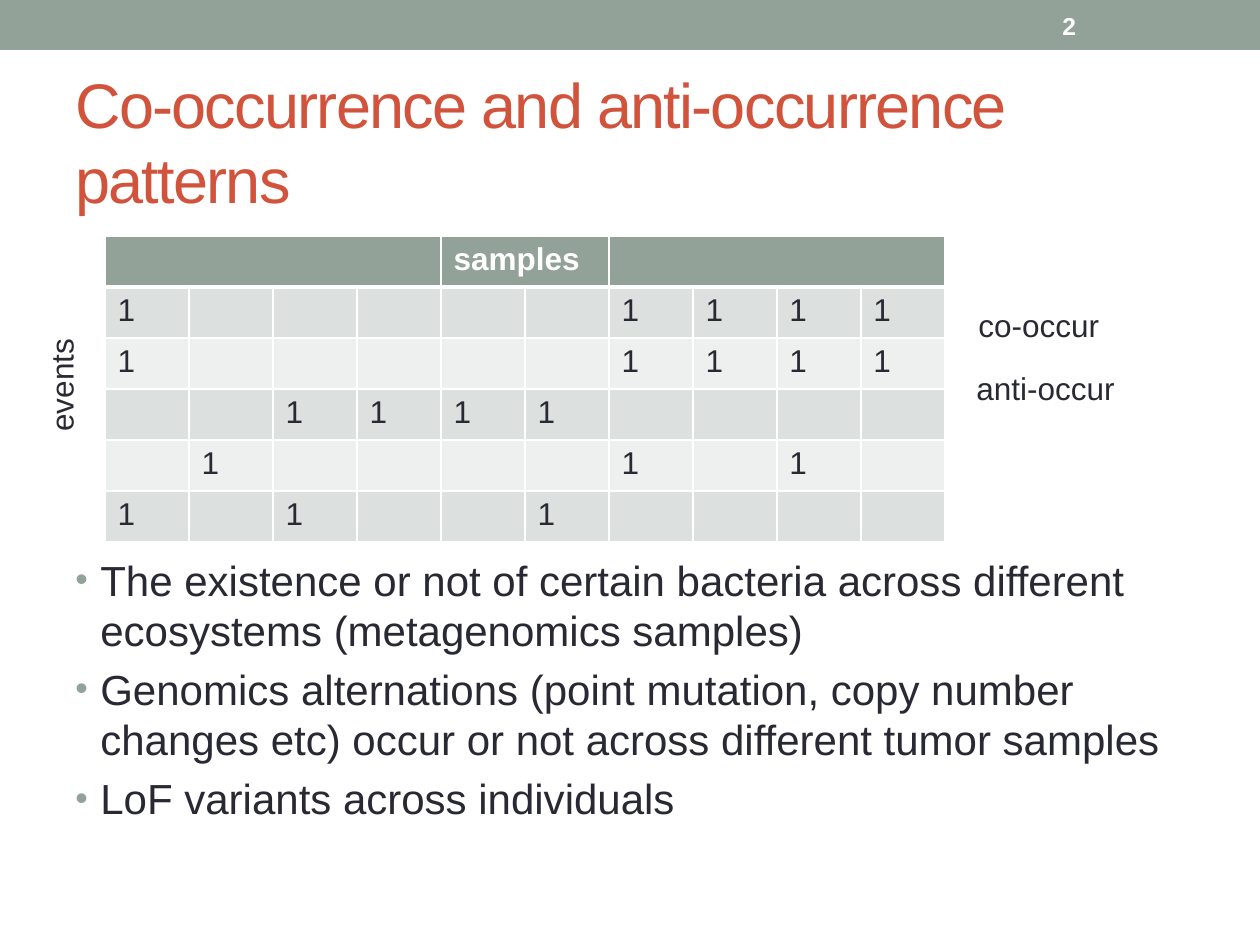
from dataclasses import dataclass, field

import pptx
import pptx.dml.color
import pptx.enum.shapes
import pptx.enum.text
import pptx.oxml
import pptx.oxml.ns
import pptx.util
from lxml import etree

PX = 914400 / 126
COLORS = {"sage": "93A299", "title": "D2533C", "text": "292934",
          "white": "FFFFFF", "odd": "DCE0DE", "even": "EEF0EF"}
MIDDLE = pptx.enum.text.MSO_ANCHOR.MIDDLE


@dataclass
class Label:
    text: str
    box: tuple[int, int, int, int]
    size: int = 18
    color: str = "text"
    bold: bool = False
    rotation: int = 0
    frame: dict = field(default_factory=lambda: {"word_wrap": False})


LABELS = [
    Label("Co-occurrence and anti-occurrence patterns", (63, 73, 1134, 136),
          36, "title", frame={"word_wrap": True, "vertical_anchor": MIDDLE}),
    Label("2", (1050, 3, 147, 45), 14, "white", True,
          frame={"word_wrap": True, "vertical_anchor": MIDDLE}),
    Label("events", (1, 359, 120, 50), rotation=270),
    Label("co-occur", (966, 300, 147, 50)),
    Label("anti-occur", (964, 363, 165, 50)),
]
BULLETS = [
    "The existence or not of certain bacteria across different ecosystems "
    "(metagenomics samples)",
    "Genomics alternations (point mutation, copy number changes etc) occur "
    "or not across different tumor samples",
    "LoF variants across individuals",
]
HEADERS = [("", 0, 3), ("samples", 4, 5), ("", 6, 9)]
EVENTS = ["1.....1111", "1.....1111", "..1111....", ".1....1.1.", "1.1..1...."]
TABLE_LEFT, TABLE_TOP, COL_W, ROW_H = 105, 236, 84, 51


def px(n: int) -> pptx.util.Emu:
    return pptx.util.Emu(round(n * PX))


def rgb(name: str) -> pptx.dml.color.RGBColor:
    return pptx.dml.color.RGBColor.from_string(COLORS[name])


def set_attrs(obj, values: dict) -> None:
    for name, value in values.items():
        setattr(obj, name, value)


def set_font(font, size: int, color: str, bold: bool = False) -> None:
    set_attrs(font, {"name": "Arial", "size": pptx.util.Pt(size), "bold": bold})
    font.color.rgb = rgb(color)


def add_label(s, label: Label):
    sp = s.shapes.add_textbox(*map(px, label.box))
    sp.rotation = label.rotation
    set_attrs(sp.text_frame, label.frame)
    r = sp.text_frame.paragraphs[0].add_run()
    r.text = label.text
    set_font(r.font, label.size, label.color, label.bold)
    return r


def add_bullets(s, items: list[str]) -> None:
    tf = s.shapes.add_textbox(*map(px, (63, 548, 1134, 344))).text_frame
    tf.word_wrap = True
    for i, item in enumerate(items):
        p = tf.paragraphs[0] if i == 0 else tf.add_paragraph()
        pPr = p._p.get_or_add_pPr()
        set_attrs(p, {"space_before": pptx.util.Pt(4.8 if i else 0)})
        pPr.set("marL", str(px(25)))
        pPr.set("indent", str(-px(25)))
        ns = pptx.oxml.ns.nsdecls("a")
        for xml in (f'<a:buClr {ns}><a:srgbClr val="{COLORS["sage"]}"/></a:buClr>',
                    f'<a:buSzPct {ns} val="85000"/>',
                    f'<a:buFont {ns} typeface="Arial"/>',
                    f'<a:buChar {ns} char="•"/>'):
            pPr.append(pptx.oxml.parse_xml(xml))
        r = p.add_run()
        r.text = item
        set_font(r.font, 24, "text")


def set_borders(cell, bottom: int) -> None:
    """White lines on all sides, with a bottom line of the given points."""
    tcPr = cell._tc.get_or_add_tcPr()
    widths = {"lnL": 1, "lnR": 1, "lnT": 1, "lnB": bottom}
    for i, (side, width) in enumerate(widths.items()):
        ln = etree.Element(pptx.oxml.ns.qn(f"a:{side}"), w=str(pptx.util.Pt(width)))
        fill = etree.SubElement(ln, pptx.oxml.ns.qn("a:solidFill"))
        etree.SubElement(fill, pptx.oxml.ns.qn("a:srgbClr"), val=COLORS["white"])
        tcPr.insert(i, ln)


def fill_cell(cell, text: str, fill: str, color: str, header: bool) -> None:
    cell.fill.solid()
    cell.fill.fore_color.rgb = rgb(fill)
    set_borders(cell, 3 if header else 1)
    p = cell.text_frame.paragraphs[0]
    if text:
        p.add_run().text = text
        set_font(p.runs[0].font, 18, color, header)


def add_event_table(s) -> None:
    rows, cols = len(EVENTS) + 1, len(EVENTS[0])
    box = (TABLE_LEFT, TABLE_TOP, cols * COL_W, rows * ROW_H)
    table = s.shapes.add_table(rows, cols, *map(px, box)).table
    for col in table.columns:
        col.width = px(COL_W)
    for row in table.rows:
        row.height = px(ROW_H)
    for text, first, last in HEADERS:
        for c in range(first, last + 1):
            fill_cell(table.cell(0, c), text if c == first else "",
                      "sage", "white", True)
        table.cell(0, first).merge(table.cell(0, last))
    for i, marks in enumerate(EVENTS, start=1):
        for c, mark in enumerate(marks):
            fill_cell(table.cell(i, c), mark.strip("."),
                      "odd" if i % 2 else "even", "text", False)


def main() -> None:
    prs = pptx.Presentation()
    set_attrs(prs, {"slide_width": px(1260), "slide_height": px(945)})
    s = prs.slides.add_slide(prs.slide_layouts[6])
    bar = s.shapes.add_shape(pptx.enum.shapes.MSO_SHAPE.RECTANGLE,
                             *map(px, (0, 0, 1260, 50)))
    bar.shadow.inherit = False
    bar.fill.solid()
    bar.fill.fore_color.rgb = rgb("sage")
    bar.line.fill.background()

    title, *others = LABELS
    add_label(s, title).font._element.set("spc", "-100")
    add_bullets(s, BULLETS)
    for label in others:
        add_label(s, label)
    add_event_table(s)
    prs.save("out.pptx")


if __name__ == "__main__":
    main()
